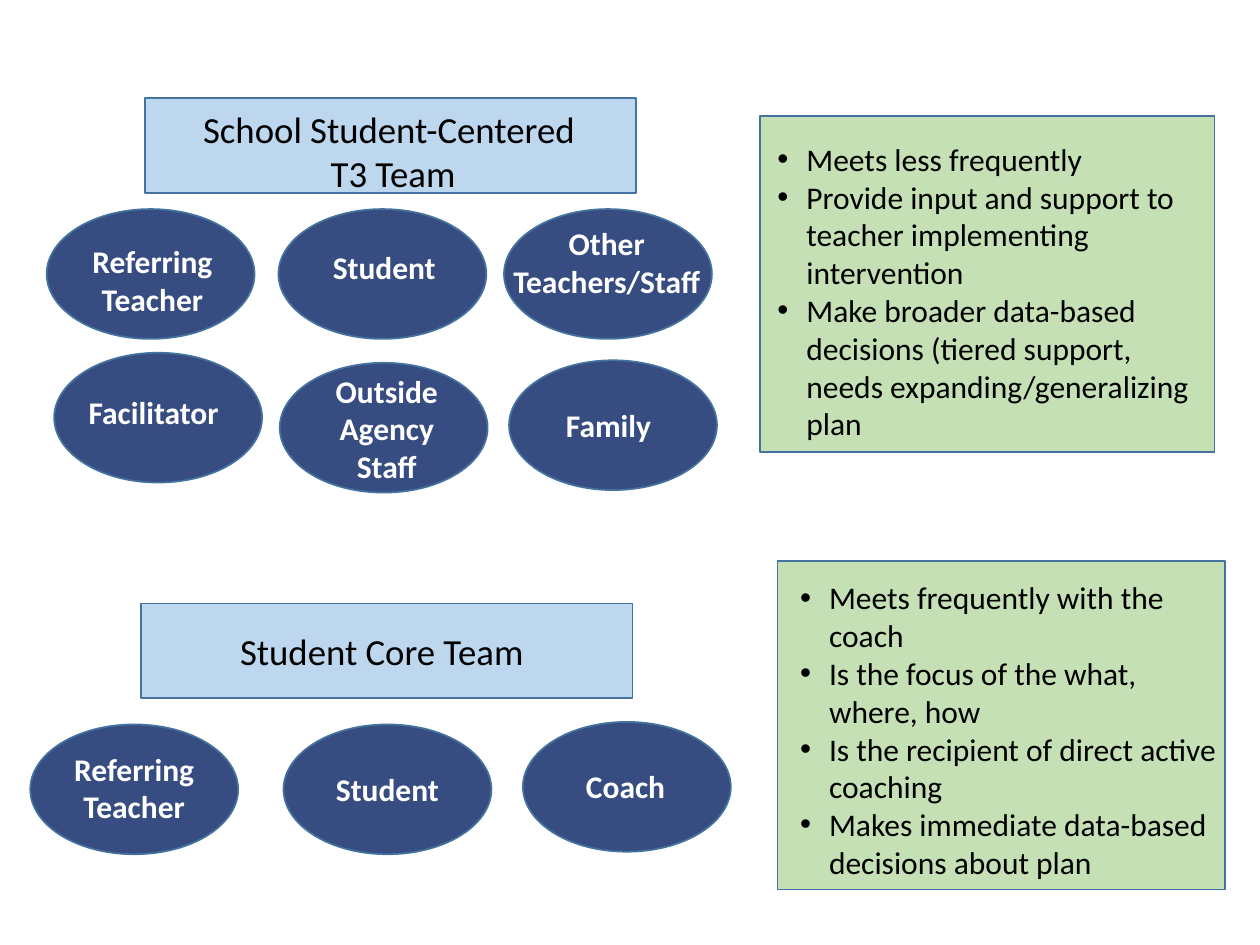
from pptx import Presentation
from pptx.dml.color import RGBColor
from pptx.enum import shapes, text
from pptx.util import Inches, Pt

NAVY = RGBColor(0x37, 0x4D, 0x81)
EDGE = RGBColor(0x43, 0x73, 0x9E)
SKY = RGBColor(0xBD, 0xD7, 0xEE)
GREEN = RGBColor(0xC5, 0xE0, 0xB4)
BLACK = RGBColor(0, 0, 0)
WHITE = RGBColor(0xFF, 0xFF, 0xFF)
RECT = shapes.MSO_SHAPE.RECTANGLE
OVAL = shapes.MSO_SHAPE.OVAL
MID = text.PP_ALIGN.CENTER
LEFT = text.PP_ALIGN.LEFT
LINE = 0.305


def draw(slide, kind, box, fill):
    """Draw one filled and outlined shape."""
    item = slide.shapes.add_shape(kind, *map(Inches, box))
    item.shadow.inherit = False
    item.fill.solid()
    item.fill.fore_color.rgb = fill
    item.line.color.rgb = EDGE
    item.line.width = Pt(1)


def write(item, lines, size=18, color=BLACK, bold=False, align=MID, hang=0):
    """Fill a text holder with formatted paragraphs."""
    frame = item.text_frame
    frame.text = "\n".join(lines)
    frame.word_wrap = True
    frame.auto_size = text.MSO_AUTO_SIZE.SHAPE_TO_FIT_TEXT
    frame.vertical_anchor = text.MSO_ANCHOR.TOP
    for para in frame.paragraphs:
        para.alignment = align
        para.space_before = Pt(0)
        if hang:
            props = para._p.get_or_add_pPr()
            props.set("marL", str(Inches(hang)))
            props.set("indent", str(-Inches(hang)))
        font = para.runs[0].font
        font.name, font.size, font.bold = "Calibri", Pt(size), bold
        font.color.rgb = color


def place(slide, idx, box):
    """Move a placeholder to a box, in front of what is drawn so far."""
    item = slide.placeholders[idx]
    item.left, item.top, item.width, item.height = map(Inches, box)
    slide.shapes._spTree.append(item._element)
    return item


def team(slide, box, idx, head, bar, shift, roles):
    """Draw a team's heading bar and its members below it."""
    left, top, wide, high = box
    draw(slide, RECT, (left + bar, top, 3.9, 0.75), SKY)
    dx, dy = shift
    spot = (left + bar + dx, top + dy, 3.68, 0.09 + 0.36 * len(head))
    write(place(slide, idx, spot), head, size=21)
    for name, x, y, dx, dy, width, rows in roles:
        x, y = left + x, top + y
        draw(slide, OVAL, (x, y, 1.65, 1.03), NAVY)
        spot = (x + dx, y + dy, width, 0.1 + LINE * rows)
        label = slide.shapes.add_textbox(*map(Inches, spot))
        write(label, [name], color=WHITE, bold=True)


def notes(slide, box, idx, shift, width, points):
    """Draw a panel with its bulleted list."""
    left, top, wide, high = box
    draw(slide, RECT, box, GREEN)
    dx, dy = shift
    item = place(slide, idx, (left + dx, top + dy, width, 2.52))
    write(item, points, align=LEFT, hang=0.23)


def main():
    """Build the slide and save it."""
    deck = Presentation()
    deck.slide_width, deck.slide_height = Inches(10), Inches(7.5)
    slide = deck.slides.add_slide(deck.slide_layouts.get_by_name("Comparison"))
    title = slide.shapes.title._element
    title.getparent().remove(title)

    team(slide, (0.37, 0.78, 5.32, 3.13), 1,
         ["School Student-Centered ", "T3 Team"], 0.78, (0.13, 0.02), [
             ("Referring Teacher", 0, 0.88, 0.22, 0.21, 1.24, 2),
             ("Student", 1.84, 0.88, 0.22, 0.26, 1.24, 1),
             ("Other Teachers/Staff", 3.63, 0.88, -0.06, 0.07, 1.75, 2),
             ("Facilitator", 0.06, 2.02, 0.17, 0.27, 1.24, 1),
             ("Outside Agency Staff", 1.85, 2.1, 0.23, 0.02, 1.24, 3),
             ("Family", 3.67, 2.08, 0.17, 0.31, 1.24, 1)])
    notes(slide, (6.03, 0.92, 3.61, 2.67), 2, (0.04, 0.14), 3.56, [
        "Meets less frequently",
        "Provide input and support to teacher implementing intervention",
        "Make broader data-based decisions (tiered support, "
        "needs expanding/generalizing plan"])
    team(slide, (0.24, 4.79, 5.56, 1.99), 3,
         ["Student Core Team"], 0.88, (0.07, 0.15), [
             ("Referring Teacher", 0, 0.96, 0.23, 0.15, 1.19, 2),
             ("Student", 2.01, 0.96, 0.29, 0.31, 1.07, 1),
             ("Coach", 3.91, 0.94, 0.28, 0.31, 1.07, 1)])
    notes(slide, (6.17, 4.45, 3.55, 2.61), 4, (0.08, 0.09), 3.51, [
        "Meets frequently with the coach",
        "Is the focus of the what, where, how",
        "Is the recipient of direct active coaching",
        "Makes immediate data-based decisions about plan"])
    deck.save("out.pptx")


if __name__ == "__main__":
    main()
